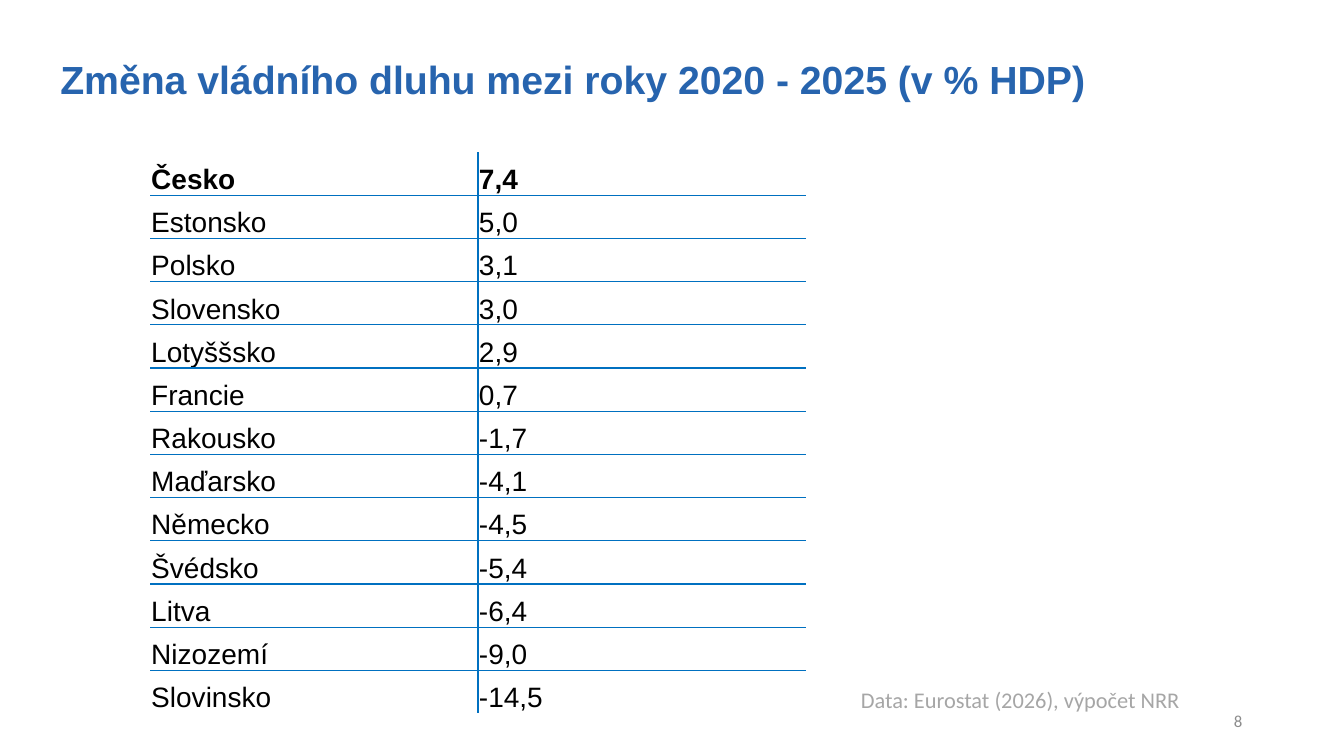
from lxml.etree import SubElement
from pptx import Presentation
from pptx.dml.color import RGBColor
from pptx.enum.text import MSO_ANCHOR, PP_ALIGN
from pptx.oxml.ns import qn
from pptx.util import Inches, Pt

TITLE = "Změna vládního dluhu mezi roky 2020 - 2025 (v % HDP)"
SOURCE = "Data: Eurostat (2026), výpočet NRR"
PAGE = "8"
DEBT_CHANGE = [
    ("Česko", "7,4"),
    ("Estonsko", "5,0"),
    ("Polsko", "3,1"),
    ("Slovensko", "3,0"),
    ("Lotyššsko", "2,9"),
    ("Francie", "0,7"),
    ("Rakousko", "-1,7"),
    ("Maďarsko", "-4,1"),
    ("Německo", "-4,5"),
    ("Švédsko", "-5,4"),
    ("Litva", "-6,4"),
    ("Nizozemí", "-9,0"),
    ("Slovinsko", "-14,5"),
]
COLORS = {"title": "2764AE", "text": "000000", "rule": "0070C0",
          "source": "A6A6A6", "page": "8C8C8C"}
NO_STYLE = "{2D5ABB26-0587-4C30-8999-92F81FD0307C}"
COL_W, TABLE_H = 3.25, 5.57


def write(tf, text, color, **font):
    p = tf.paragraphs[0]
    r = p.add_run()
    r.text = text
    r.font.color.rgb = RGBColor.from_string(COLORS[color])
    for name, value in font.items():
        setattr(r.font, name, value)
    return p


def add_text(s, box, text, color, wrap=True, **font):
    tf = s.shapes.add_textbox(*map(Inches, box)).text_frame
    tf.word_wrap = wrap
    return tf, write(tf, text, color, **font)


def add_borders(cell, sides):
    """Rule the given sides, listed in the order L, R, T, B."""
    tc_pr = cell._tc.get_or_add_tcPr()
    for side in sides:
        ln = SubElement(tc_pr, qn(f"a:ln{side}"), w=str(Pt(1)))
        fill = SubElement(ln, qn("a:solidFill"))
        SubElement(fill, qn("a:srgbClr"), val=COLORS["rule"])


def add_debt_table(s):
    last = len(DEBT_CHANGE) - 1
    box = map(Inches, (1.49, 1.51, 2 * COL_W, TABLE_H))
    table = s.shapes.add_table(last + 1, 2, *box).table
    table.first_row = table.horz_banding = False
    table._tbl.tblPr.find(qn("a:tableStyleId")).text = NO_STYLE
    for i, row in enumerate(DEBT_CHANGE):
        table.rows[i].height = Inches(TABLE_H / (last + 1))
        for j, text in enumerate(row):
            cell = table.cell(i, j)
            sides = "L" if j else "R"
            sides += ("T" if i > 0 else "") + ("B" if i < last else "")
            add_borders(cell, sides)
            cell.fill.background()
            cell.vertical_anchor = MSO_ANCHOR.BOTTOM
            cell.margin_left = cell.margin_right = cell.margin_top = Inches(0.01)
            cell.margin_bottom = 0
            write(cell.text_frame, text, "text", name="Arial", size=Pt(20), bold=i == 0)


def main():
    prs = Presentation()
    prs.slide_width, prs.slide_height = Inches(13.33), Inches(7.5)
    s = prs.slides.add_slide(prs.slide_layouts[6])

    tf, p = add_text(s, (9.42, 6.95, 3, 0.4), PAGE, "page", name="Calibri", size=Pt(12))
    tf.vertical_anchor = MSO_ANCHOR.MIDDLE
    p.alignment = PP_ALIGN.RIGHT

    add_debt_table(s)

    tf, p = add_text(s, (0.5, 0.55, 12.33, 0.83), TITLE, "title",
                     name="Arial", size=Pt(28), bold=True)
    p.line_spacing = 0.9

    add_text(s, (8.44, 6.76, 3.63, 0.37), SOURCE, "source", wrap=False,
             name="Calibri", size=Pt(16))
    prs.save("out.pptx")


if __name__ == "__main__":
    main()
